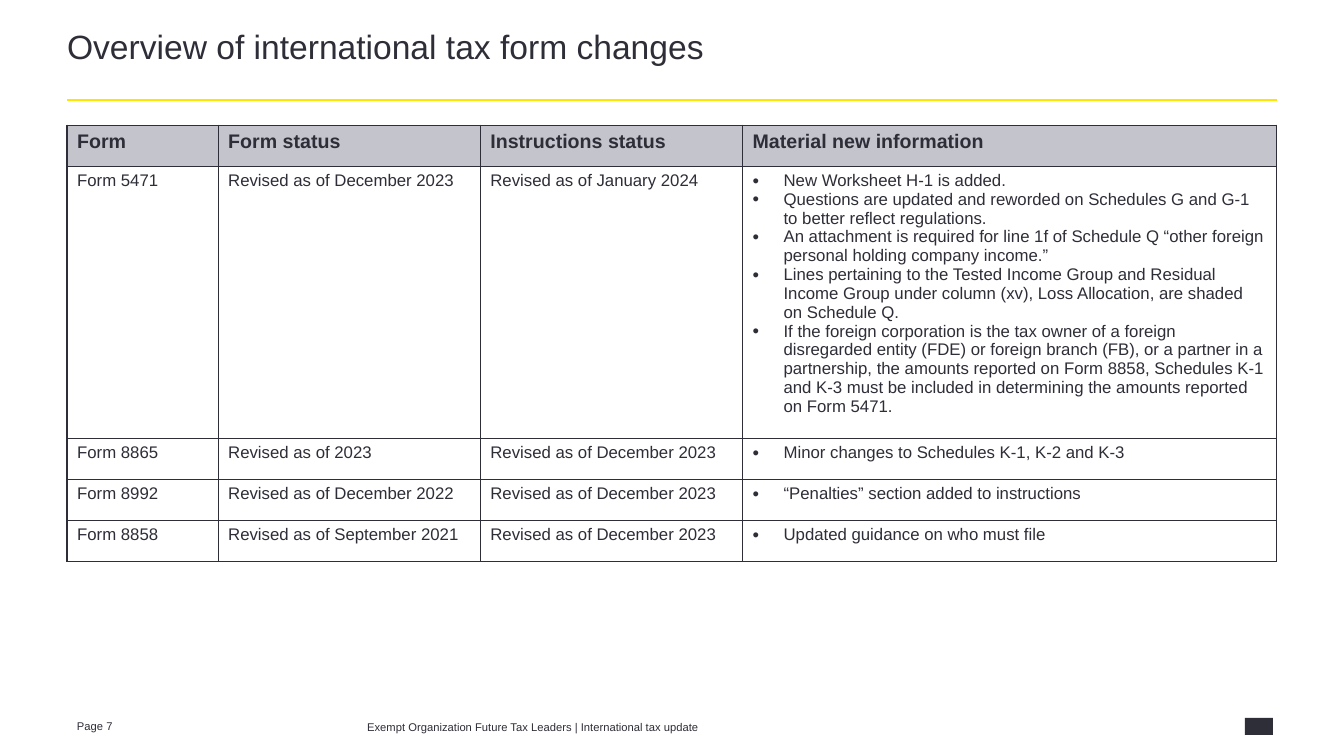
"""Build the slide that summarises international tax form changes."""
from lxml import etree
from pptx import Presentation
from pptx import util as u
from pptx.dml.color import RGBColor
from pptx.enum import shapes, text
from pptx.oxml import ns

SCALE = 914400 / 100.7
DARK, YELLOW, GREY, WHITE = "2E2E38", "FFE600", "C4C4CD", "FFFFFF"


def px(*lengths):
    return [u.Emu(round(length * SCALE)) for length in lengths]


def paint(target, colour, size=None, bold=False):
    if size:
        target.name, target.size, target.bold = "Arial", u.Pt(size), bold
        target = target.fill
    target.solid()
    target.fore_color.rgb = RGBColor.from_string(colour)


presentation = Presentation()
presentation.slide_width, presentation.slide_height = px(1343, 755)
slide = presentation.slides.add_slide(presentation.slide_layouts[5])

title = slide.shapes.title
title.left, title.top, title.width, title.height = px(67, 32, 1209, 65)
frame = title.text_frame
frame.text = "Overview of international tax form changes"
frame.margin_left = frame.margin_top = frame.margin_right = frame.margin_bottom = 0
frame.vertical_anchor = text.MSO_ANCHOR.TOP
paragraph = frame.paragraphs[0]
paragraph.alignment = text.PP_ALIGN.LEFT
paragraph.line_spacing = 0.85
paint(paragraph.font, DARK, 24)

rule = slide.shapes.add_connector(shapes.MSO_CONNECTOR.STRAIGHT, *px(67, 100, 1276, 100))
paint(rule.line.fill, YELLOW)
rule.line.width = u.Pt(1.5)
etree.SubElement(rule._element.spPr, ns.qn("a:effectLst"))

footers = [
    ("Page 7", 67, 713, 74, 20),
    ("Exempt Organization Future Tax Leaders | International tax update", 357, 714, 672, 24),
]
for wording, *box in footers:
    frame = slide.shapes.add_textbox(*px(*box)).text_frame
    frame.word_wrap = True
    frame.text = wording
    paint(frame.paragraphs[0].font, DARK, 8)

emblem = slide.shapes.add_shape(shapes.MSO_SHAPE.RECTANGLE, *px(1244, 717, 28, 17))
emblem.shadow.inherit = False
paint(emblem.fill, DARK)
emblem.line.fill.background()

rows = [
    ("Form", "Form status", "Instructions status", ["Material new information"]),
    ("Form 5471", "Revised as of December 2023", "Revised as of January 2024", [
        "New Worksheet H-1 is added.",
        "Questions are updated and reworded on Schedules G and G-1 to better reflect regulations.",
        "An attachment is required for line 1f of Schedule Q “other foreign personal holding "
        "company income.”",
        "Lines pertaining to the Tested Income Group and Residual Income Group under column (xv), "
        "Loss Allocation, are shaded on Schedule Q.",
        "If the foreign corporation is the tax owner of a foreign disregarded entity (FDE) or "
        "foreign branch (FB), or a partner in a partnership, the amounts reported on Form 8858, "
        "Schedules K-1 and K-3 must be included in determining the amounts reported on Form 5471.",
    ]),
    ("Form 8865", "Revised as of 2023", "Revised as of December 2023",
     ["Minor changes to Schedules K-1, K-2 and K-3"]),
    ("Form 8992", "Revised as of December 2022", "Revised as of December 2023",
     ["“Penalties” section added to instructions"]),
    ("Form 8858", "Revised as of September 2021", "Revised as of December 2023",
     ["Updated guidance on who must file"]),
]
column_widths = px(151, 262, 262, 534)
row_heights = px(41, 255, 41, 41, 41)
table = slide.shapes.add_table(
    len(rows), len(column_widths), *px(67, 125), sum(column_widths), sum(row_heights)).table
for column, width in zip(table.columns, column_widths):
    column.width = width
for row, height in zip(table.rows, row_heights):
    row.height = height

hanging = px(31)[0]
for row_index, (form, status, instructions, changes) in enumerate(rows):
    header = row_index == 0
    for column_index, lines in enumerate([[form], [status], [instructions], changes]):
        cell = table.cell(row_index, column_index)
        cell.text = "\n".join(lines)
        properties = cell._tc.get_or_add_tcPr()
        for side in ("lnL", "lnR", "lnT", "lnB"):
            border = etree.SubElement(properties, ns.qn(f"a:{side}"), w=str(u.Pt(1)))
            fill = etree.SubElement(border, ns.qn("a:solidFill"))
            etree.SubElement(fill, ns.qn("a:srgbClr"), val=DARK)
        paint(cell.fill, GREY if header else WHITE)
        for paragraph in cell.text_frame.paragraphs:
            if column_index == 3 and not header:
                bullet = paragraph._p.get_or_add_pPr()
                bullet.set("marL", str(hanging))
                bullet.set("indent", str(-hanging))
                colour = etree.SubElement(bullet, ns.qn("a:buClr"))
                etree.SubElement(colour, ns.qn("a:srgbClr"), val=DARK)
                etree.SubElement(bullet, ns.qn("a:buSzPct"), val="110000")
                etree.SubElement(bullet, ns.qn("a:buFont"), typeface="Arial")
                etree.SubElement(bullet, ns.qn("a:buChar"), char="•")
            paint(paragraph.font, DARK, 14 if header else 12, header)

presentation.save("out.pptx")
